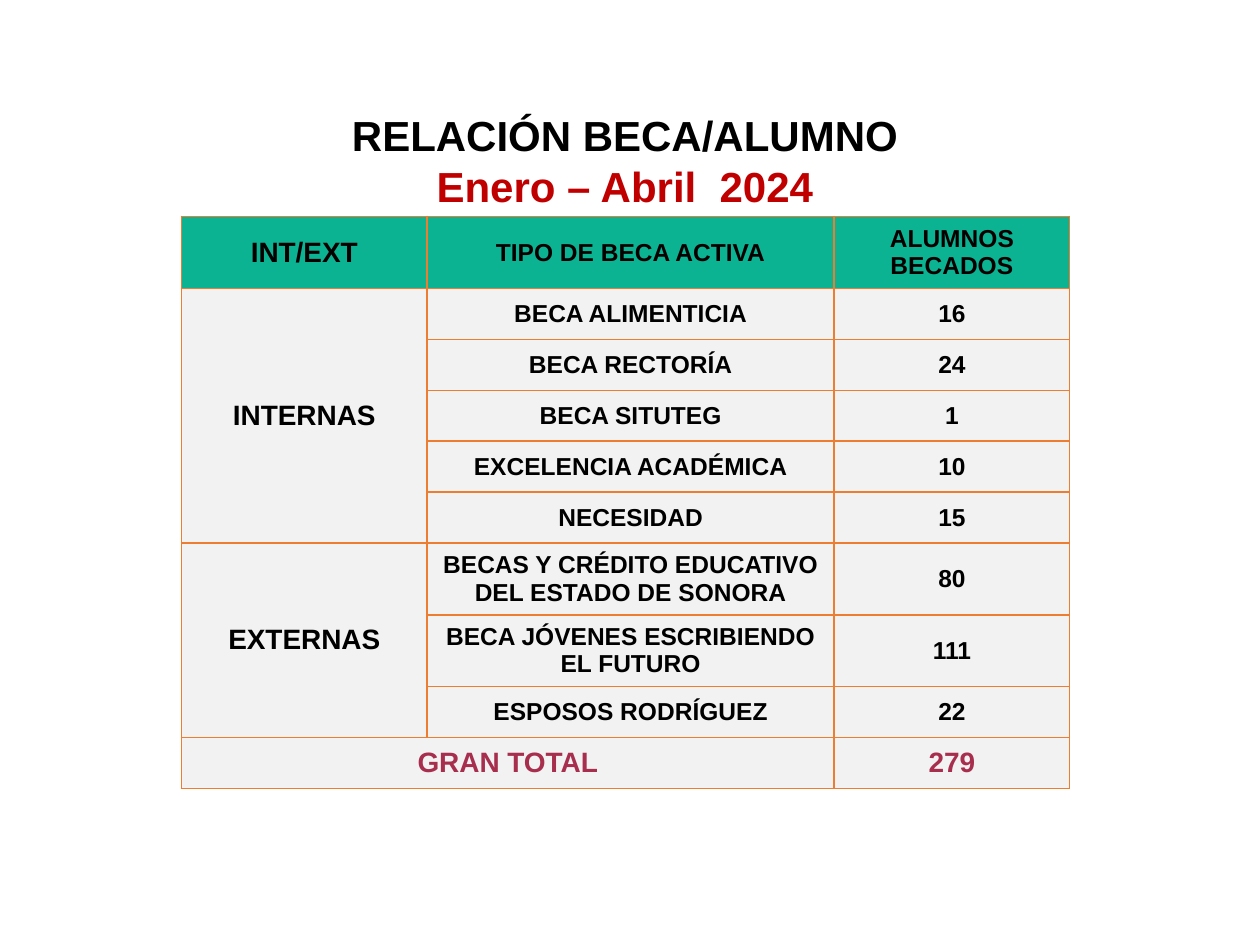
"""Build the slide that relates scholarships to students."""
from itertools import product

from lxml.etree import SubElement
from pptx import Presentation
from pptx.dml.color import RGBColor
from pptx.enum.text import MSO_ANCHOR as Anchor, MSO_AUTO_SIZE as AutoSize, PP_ALIGN as Align
from pptx.oxml.ns import qn
from pptx.util import Inches, Pt

BLACK, RED, WINE = "000000", "C00000", "A82E4E"
GREEN, GREY, ORANGE = "0CB393", "F2F2F2", "ED7D31"

HEADINGS = ["INT/EXT", "TIPO DE BECA ACTIVA", "ALUMNOS BECADOS"]
GROUPS = {
    "INTERNAS": [
        ("BECA ALIMENTICIA", 16),
        ("BECA RECTORÍA", 24),
        ("BECA SITUTEG", 1),
        ("EXCELENCIA ACADÉMICA", 10),
        ("NECESIDAD", 15),
    ],
    "EXTERNAS": [
        ("BECAS Y CRÉDITO EDUCATIVO DEL ESTADO DE SONORA", 80),
        ("BECA JÓVENES ESCRIBIENDO EL FUTURO", 111),
        ("ESPOSOS RODRÍGUEZ", 22),
    ],
}
COLUMN_WIDTHS = [1.95, 3.23, 1.87]
TABLE_HEIGHT, TALL_ROW = 4.54, 0.57
TALL_ROWS = {0, 6, 7}


def rgb(color):
    """Turn a hex string into a colour."""
    return RGBColor.from_string(color)


def write(para, text, size=14, color=BLACK, font="Arial"):
    """Write one bold, centred run into a paragraph."""
    para.alignment = Align.CENTER
    span = para.add_run()
    span.text = text
    span.font.name = font
    span.font.size = Pt(size)
    span.font.bold = True
    span.font.color.rgb = rgb(color)


class SlideBuilder:
    """Hold the style and the current slide."""

    def __init__(self, page, border=ORANGE, border_width=1):
        """Keep the slide and the border style."""
        self.page = page
        self.border = border
        self.border_width = border_width

    def title(self, lines, left, top, width, height):
        """Place the title with one paragraph for each coloured line."""
        box = self.page.shapes.title
        box.left, box.top, box.width, box.height = map(Inches, (left, top, width, height))
        frame = box.text_frame
        frame.word_wrap = True
        frame.auto_size = AutoSize.NONE
        frame.vertical_anchor = Anchor.TOP
        for index, (text, color) in enumerate(lines):
            para = frame.add_paragraph() if index else frame.paragraphs[0]
            write(para, text, size=24, color=color)

    def table(self, left, top, widths, heights):
        """Add an empty table with bordered grey cells and a green header."""
        size = len(heights), len(widths)
        frame = self.page.shapes.add_table(
            *size, Inches(left), Inches(top), Inches(sum(widths)), Inches(sum(heights))
        )
        grid = frame.table
        for column, width in zip(grid.columns, widths):
            column.width = Inches(width)
        for row, height in zip(grid.rows, heights):
            row.height = Inches(height)
        for row, column in product(*map(range, size)):
            cell = grid.cell(row, column)
            self.outline(cell)
            cell.fill.solid()
            cell.fill.fore_color.rgb = rgb(GREY if row else GREEN)
            cell.vertical_anchor = Anchor.MIDDLE
        return grid

    def outline(self, cell):
        """Draw the four borders of a cell."""
        properties = cell._tc.get_or_add_tcPr()
        for side in ("a:lnL", "a:lnR", "a:lnT", "a:lnB"):
            line = SubElement(properties, qn(side), w=str(Pt(self.border_width)))
            fill = SubElement(line, qn("a:solidFill"))
            SubElement(fill, qn("a:srgbClr"), val=self.border)

    def label(self, cell, text, **style):
        """Write the text of a cell."""
        write(cell.text_frame.paragraphs[0], str(text), **style)


def main():
    """Build and save the deck."""
    deck = Presentation()
    deck.slide_width, deck.slide_height = Inches(10), Inches(7.5)
    builder = SlideBuilder(deck.slides.add_slide(deck.slide_layouts[5]))
    builder.title(
        [("RELACIÓN BECA/ALUMNO", BLACK), ("Enero – Abril  2024", RED)],
        1.97, 0.82, 5.98, 0.91,
    )

    row_count = sum(map(len, GROUPS.values())) + 2
    short_row = (TABLE_HEIGHT - TALL_ROW * len(TALL_ROWS)) / (row_count - len(TALL_ROWS))
    heights = [TALL_ROW if row in TALL_ROWS else short_row for row in range(row_count)]
    grid = builder.table(1.44, 1.72, COLUMN_WIDTHS, heights)

    for column, heading in enumerate(HEADINGS):
        builder.label(grid.cell(0, column), heading, size=14 if column else 16)
    row, total = 1, 0
    for group, grants in GROUPS.items():
        grid.cell(row, 0).merge(grid.cell(row + len(grants) - 1, 0))
        builder.label(grid.cell(row, 0), group, size=16)
        for grant, students in grants:
            builder.label(grid.cell(row, 1), grant)
            builder.label(grid.cell(row, 2), students)
            row += 1
            total += students
    grid.cell(row, 0).merge(grid.cell(row, 1))
    builder.label(grid.cell(row, 0), "GRAN TOTAL", size=16, color=WINE)
    builder.label(grid.cell(row, 2), total, size=16, color=WINE)
    deck.save("out.pptx")


if __name__ == "__main__":
    main()
